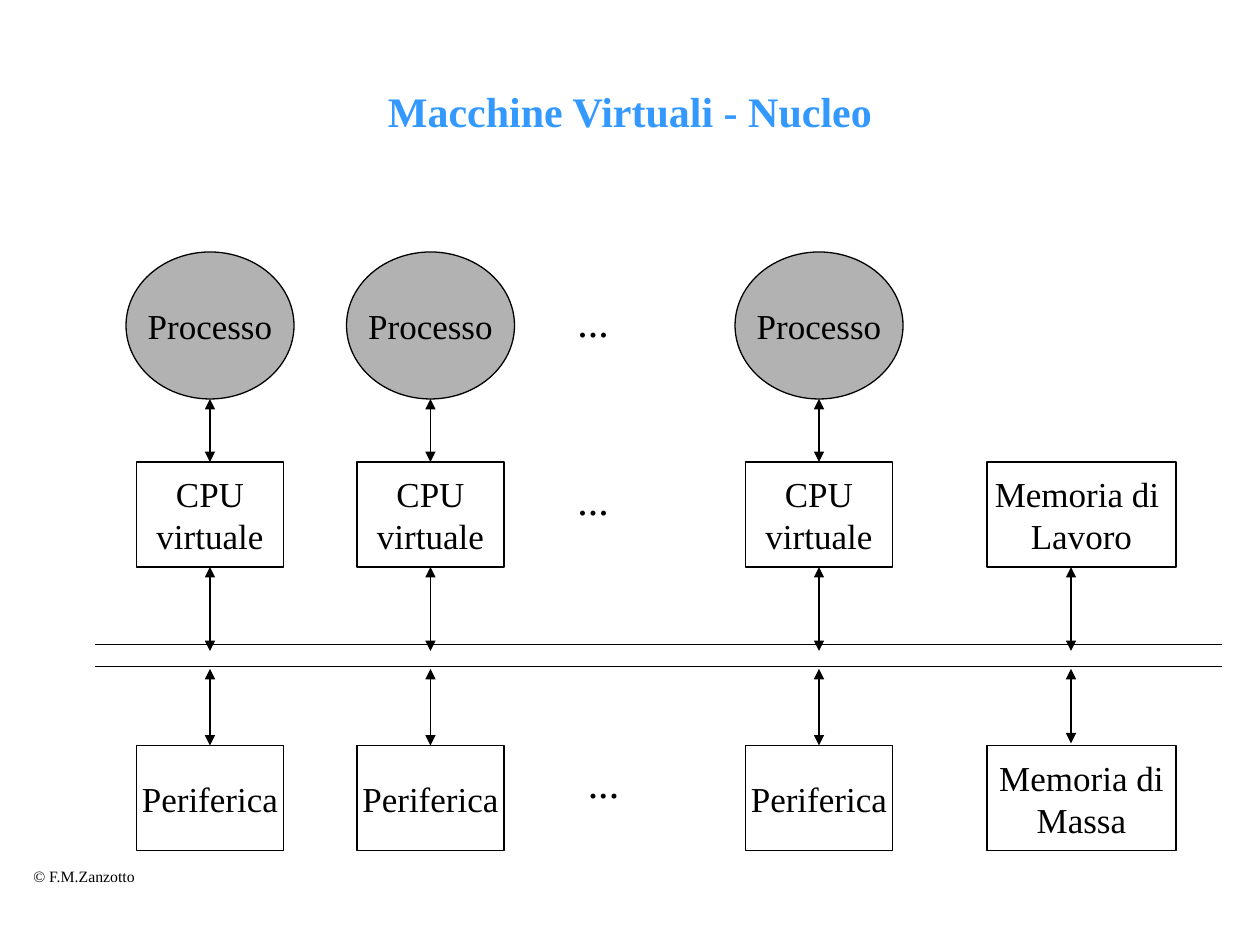
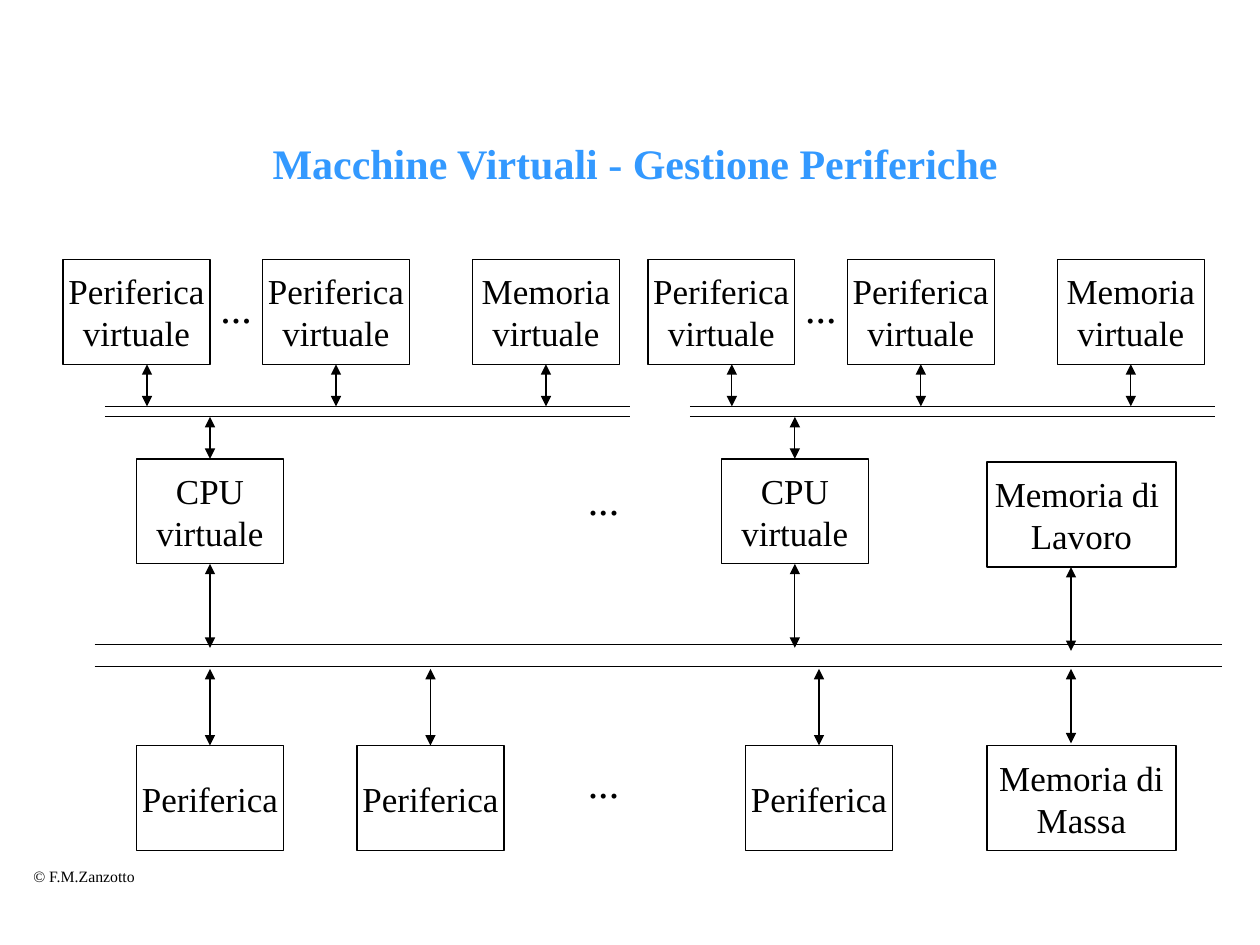
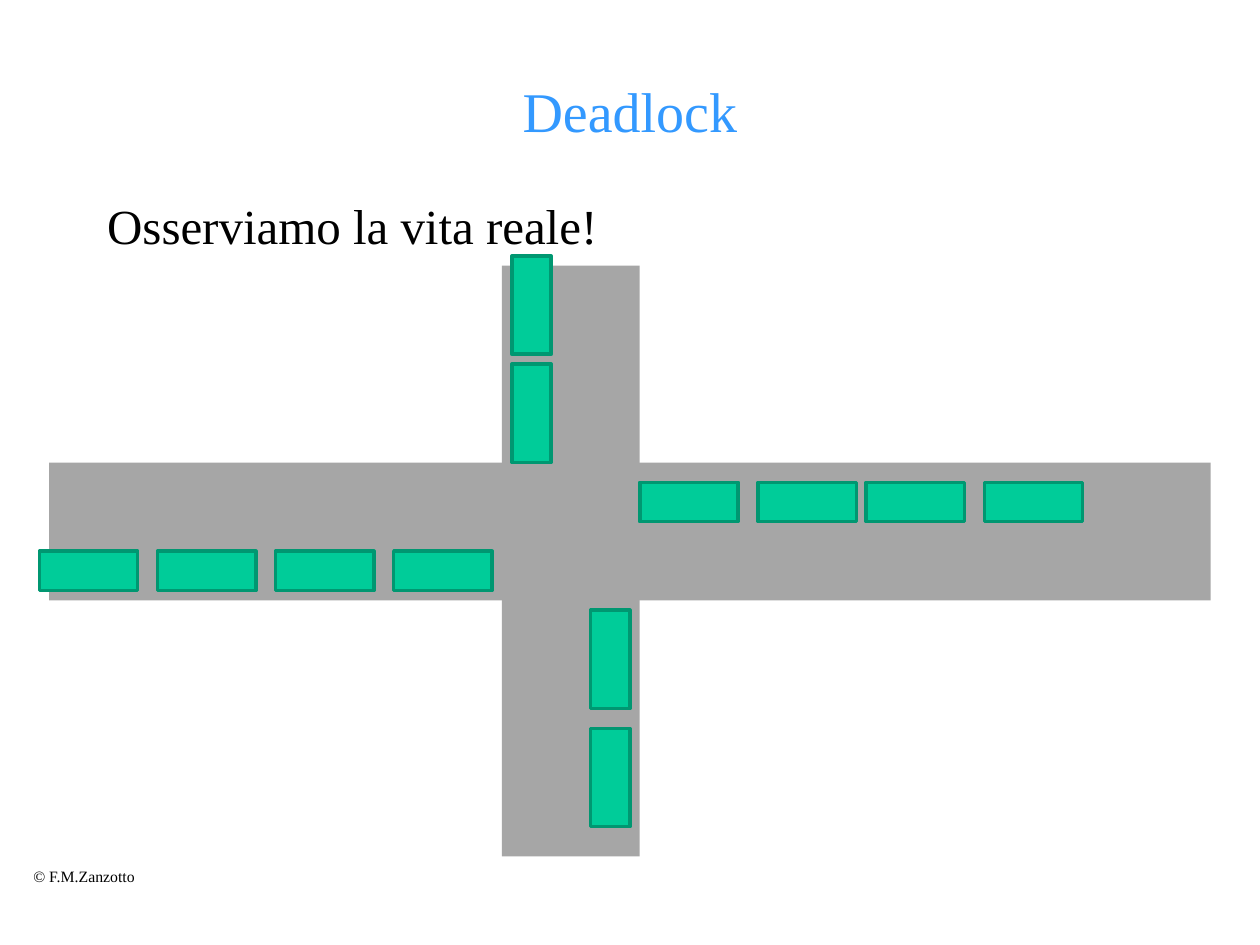
from lxml import etree
from pptx import Presentation
from pptx import util as u
from pptx.dml.color import RGBColor
from pptx.enum import shapes, text
from pptx.oxml import ns

COLORS = {"title": "3399FF", "ink": "000000", "process": "B2B2B2",
          "road": "A6A6A6", "car": "00CC99", "car_edge": "009771"}
FONT = "Times New Roman"
WIDTH, HEIGHT = u.Inches(10), u.Inches(7.5)
CELL = WIDTH / 120
ROAD_CELL = WIDTH / 128
BOX_WIDTH, BOX_HEIGHT = 14, 10


def lengths(*cells, unit=CELL):
    """Turn counts of grid cells into slide lengths."""
    return [u.Emu(round(count * unit)) for count in cells]


def color(name):
    """Look up a named colour."""
    return RGBColor.from_string(COLORS[name])


def format_text(frame, size, ink="ink", bold=False, align=None):
    """Format every run of a text frame."""
    for para in frame.paragraphs:
        para.alignment = align
        for span in para.runs:
            span.font.name, span.font.size = FONT, u.Pt(size)
            span.font.bold = bold
            span.font.color.rgb = color(ink)


def add_label(page, left, top, width, height, words, size):
    """Add an unwrapped text box."""
    label = page.shapes.add_textbox(*lengths(left, top, width, height))
    frame = label.text_frame
    frame.text, frame.word_wrap = words, False
    frame.auto_size = text.MSO_AUTO_SIZE.SHAPE_TO_FIT_TEXT
    format_text(frame, size)


def add_dots(page, left, top):
    """Add the dots that stand for further items."""
    add_label(page, left, top, 5.4, 6, "...", 24)


def add_block(page, kind, left, top, width, height, fill=None,
              edge=None, weight=0.75, unit=CELL):
    """Add a preset shape with the given fill and outline."""
    block = page.shapes.add_shape(kind, *lengths(left, top, width, height, unit=unit))
    block.shadow.inherit = False
    if fill:
        block.fill.solid()
        block.fill.fore_color.rgb = color(fill)
    else:
        block.fill.background()
    if edge:
        block.line.color.rgb = color(edge)
        block.line.width = u.Pt(weight)
    else:
        block.line.fill.background()
    return block


def add_node(page, left, top, words, width=BOX_WIDTH, height=BOX_HEIGHT,
             kind=shapes.MSO_SHAPE.RECTANGLE, fill=None):
    """Add a labelled node of the diagram."""
    node = add_block(page, kind, left, top, width, height, fill, "ink")
    frame = node.text_frame
    frame.text, frame.word_wrap = words, False
    frame.vertical_anchor = text.MSO_ANCHOR.MIDDLE
    format_text(frame, 20, align=text.PP_ALIGN.CENTER)
    return node


def add_line(page, x1, y1, x2, y2):
    """Add a thin black straight connector."""
    line = page.shapes.add_connector(shapes.MSO_CONNECTOR.STRAIGHT,
                                     *lengths(x1, y1, x2, y2))
    line.line.color.rgb = color("ink")
    line.line.width = u.Pt(0.75)
    etree.SubElement(line._element.spPr, ns.qn("a:effectLst"))
    return line


def add_arrow(page, x, top, bottom, above=None, below=None):
    """Add a vertical two-headed arrow, joined to the nodes given."""
    arrow = add_line(page, x, top, x, bottom)
    outline = arrow.line._get_or_add_ln()
    for end in ("a:headEnd", "a:tailEnd"):
        etree.SubElement(outline, ns.qn(end), type="triangle")
    if above is not None:
        arrow.begin_connect(above, 2)
    if below is not None:
        arrow.end_connect(below, 0)


def add_bus(page, left, right, *rows):
    """Draw a bus as parallel horizontal lines."""
    for row in rows:
        add_line(page, left, row, right, row)


def draw_hardware(page, left, top):
    """Draw the main bus with its memories and peripherals."""
    bus_top, bus_bottom, lower = top + 17.4, top + 19.5, top + 27
    add_bus(page, left, left + 107.4, bus_top, bus_bottom)
    for column in (4, 25, 62):
        node = add_node(page, left + column, lower, "Periferica")
        add_arrow(page, left + column + BOX_WIDTH / 2, bus_bottom + 0.2, lower, below=node)
    for row, words in ((top, "Memoria di \nLavoro"), (lower, "Memoria di\nMassa")):
        add_node(page, left + 85, row, words, width=18)
    add_arrow(page, left + 93, top + BOX_HEIGHT, top + 18)
    add_arrow(page, left + 93, bus_bottom + 0.2, lower - 0.2)
    add_dots(page, left + 45.8, lower + 0.5)


def draw_kernel(page, left, top):
    """Draw processes, each on its own virtual CPU."""
    for column in (0, 21, 58):
        x = left + column
        add_node(page, x, top, "Processo", 16, 14, shapes.MSO_SHAPE.OVAL, "process")
        cpu = add_node(page, x + 1, top + 20, "CPU\nvirtuale")
        add_arrow(page, x + 8, top + 14, top + 20, below=cpu)
        add_arrow(page, x + 8, top + 30, top + 38, above=cpu)
    for row in (3.6, 20.5):
        add_dots(page, left + 41.8, top + row)


def draw_virtual_machine(page, left, top):
    """Draw a virtual CPU whose own bus serves virtual devices."""
    add_bus(page, left + 4, left + 54, top + 14, top + 15)
    add_node(page, left, top, "Periferica\nvirtuale")
    add_arrow(page, left + 8, top + BOX_HEIGHT, top + 14)
    for column, name in ((19, "Periferica"), (39, "Memoria")):
        node = add_node(page, left + column, top, f"{name}\nvirtuale")
        add_arrow(page, left + column + BOX_WIDTH / 2, top + BOX_HEIGHT, top + 14, above=node)
    cpu = add_node(page, left + 7, top + 19, "CPU\nvirtuale")
    add_arrow(page, left + 14, top + 15, top + 19, below=cpu)
    add_arrow(page, left + 14, top + 29, top + 37, above=cpu)
    add_dots(page, left + 13.8, top + 1.5)


def draw_crossroads(page, left, top):
    """Draw two crossing roads blocked by queues of cars."""
    def add_rect(x, y, width, height, *style):
        add_block(page, shapes.MSO_SHAPE.RECTANGLE, left + x, top + y,
                  width, height, *style, unit=ROAD_CELL)

    add_rect(46, 0, 14, 60, "road")
    add_rect(0, 20, 118, 14, "road")
    car = ("car", "car_edge", 2)
    for row, columns in ((29, (-1, 11, 23, 35)), (22, (60, 72, 83, 95))):
        for column in columns:
            add_rect(column, row, 10, 4, *car)
    for column, rows in ((47, (-1, 10)), (55, (35, 47))):
        for row in rows:
            add_rect(column, row, 4, 10, *car)


def set_placeholder(holder, box, words, anchor):
    """Place a placeholder and fill it with words."""
    holder.left, holder.top, holder.width, holder.height = lengths(*box)
    frame = holder.text_frame
    frame.text, frame.word_wrap = words, True
    frame.auto_size = text.MSO_AUTO_SIZE.NONE
    frame.vertical_anchor = anchor
    return frame


def add_page(deck, title, box=(9, 6, 102, 9), size=24, bold=True, layout=5):
    """Add a slide with the shared title style and copyright line."""
    page = deck.slides.add_slide(deck.slide_layouts[layout])
    frame = set_placeholder(page.shapes.title, box, title, text.MSO_ANCHOR.MIDDLE)
    format_text(frame, size, "title", bold, text.PP_ALIGN.CENTER)
    add_label(page, 2, 82, 12.2, 3, "© F.M.Zanzotto", 9)
    return page


def set_body(page, words):
    """Fill the body placeholder with a plain paragraph."""
    frame = set_placeholder(page.placeholders[1], (9, 18, 102, 62), words,
                            text.MSO_ANCHOR.TOP)
    para = frame.paragraphs[0]
    props = para._p.get_or_add_pPr()
    props.set("marL", str(u.Inches(0.38)))
    props.set("indent", str(u.Inches(-0.38)))
    etree.SubElement(props, ns.qn("a:buNone"))
    para.space_before = u.Pt(0)
    format_text(frame, 28)


def main():
    """Build the three slides and save the deck."""
    deck = Presentation()
    deck.slide_width, deck.slide_height = WIDTH, HEIGHT

    page = add_page(deck, "Macchine Virtuali - Nucleo")
    draw_kernel(page, 12, 24)
    draw_hardware(page, 9, 44)

    page = add_page(deck, "Macchine Virtuali - Gestione Periferiche", (6.5, 8, 108, 15))
    draw_hardware(page, 9, 44)
    for left in (6, 61.7):
        draw_virtual_machine(page, left, 24.7)
    add_dots(page, 54.8, 44.5)

    page = add_page(deck, "Deadlock", size=32, bold=False, layout=1)
    set_body(page, "Osserviamo la vita reale!")
    draw_crossroads(page, 5, 27)

    deck.save("out.pptx")


if __name__ == "__main__":
    main()
